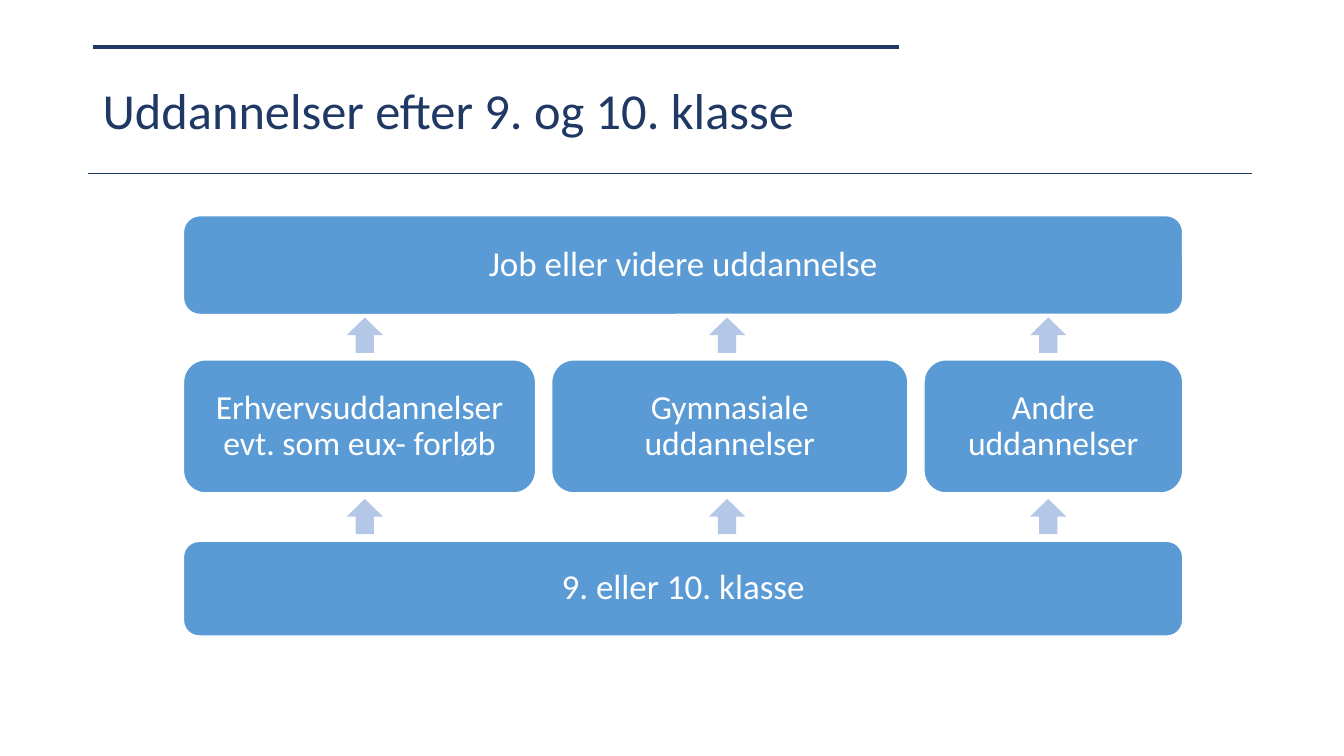
from itertools import product

from lxml import etree
from pptx import Presentation
from pptx.dml.color import RGBColor
from pptx.enum.shapes import MSO_CONNECTOR, MSO_SHAPE
from pptx.enum.text import MSO_ANCHOR, PP_ALIGN
from pptx.oxml.ns import qn
from pptx.util import Inches, Pt

STRAIGHT = MSO_CONNECTOR.STRAIGHT
ROUNDED = MSO_SHAPE.ROUNDED_RECTANGLE
UP_ARROW = MSO_SHAPE.UP_ARROW
MIDDLE = MSO_ANCHOR.MIDDLE
LEFT, CENTER = PP_ALIGN.LEFT, PP_ALIGN.CENTER


def colour(hex_value):
    return RGBColor.from_string(hex_value)


def apply(target, values):
    for key, value in values.items():
        setattr(target, key, value)


class EducationSlide:
    NAVY, BLUE, PALE, WHITE = "203864", "5B9BD5", "B4C7E7", "FFFFFF"
    FONT = "Calibri"

    def __init__(self, deck):
        self.width, self.height = deck.slide_width, deck.slide_height
        self.shapes = deck.slides.add_slide(deck.slide_layouts[6]).shapes

    def place(self, x, y, *size):
        spans = (self.width, self.height) * 2
        return [round(share * span / 100) for share, span in zip((x, y, *size), spans)]

    def label(self, shape, words, size, ink, align):
        frame = shape.text_frame
        apply(frame, {"text": words, "word_wrap": True, "vertical_anchor": MIDDLE})
        apply(frame, dict.fromkeys(("margin_left", "margin_right", "margin_top", "margin_bottom"), Inches(0.1)))
        paragraph = frame.paragraphs[0]
        apply(paragraph, {"alignment": align, "line_spacing": 0.9})
        apply(paragraph.runs[0].font, {"name": self.FONT, "size": Pt(size)})
        paragraph.runs[0].font.color.rgb = colour(ink)

    def title(self, words, *area):
        self.label(self.shapes.add_textbox(*self.place(*area)), words, 36, self.NAVY, LEFT)

    def rule(self, start, end, y, weight):
        line = self.shapes.add_connector(STRAIGHT, *self.place(start, y, end, y))
        line.line.color.rgb = colour(self.NAVY)
        line.line.width = Pt(weight)
        etree.SubElement(line._element.spPr, qn("a:effectLst"))

    def block(self, kind, fill, *area):
        shape = self.shapes.add_shape(kind, *self.place(*area))
        shape.shadow.inherit = False
        shape.fill.solid()
        shape.fill.fore_color.rgb = colour(fill)
        return shape

    def step(self, words, size, *area):
        shape = self.block(ROUNDED, self.BLUE, *area)
        shape.line.color.rgb = colour(self.WHITE)
        shape.line.width = Pt(1)
        self.label(shape, words, size, self.WHITE, CENTER)

    def arrow(self, center, top):
        width, height = 2.7, 4.67
        shape = self.block(UP_ARROW, self.PALE, center - width / 2, top, width, height)
        shape.line.fill.background()


def main():
    deck = Presentation()
    apply(deck, {"slide_width": Inches(13.33), "slide_height": Inches(7.5)})
    slide = EducationSlide(deck)

    slide.rule(6.9, 66.9, 6.27, 3)
    slide.rule(6.53, 93.15, 22.93, 0.25)
    slide.title("Uddannelser efter 9. og 10. klasse", 6.9, 5.33, 86.25, 19.33)

    left, full_width, gap = 13.65, 74.35, 1.2
    slide.step("Job eller videre uddannelse", 25, left, 28.53, full_width, 13.07)
    programme_left = left
    for programme, width in (
        ("Erhvervsuddannelser evt. som eux- forløb", 26.2),
        ("Gymnasiale uddannelser", 26.5),
        ("Andre uddannelser", 19.25),
    ):
        slide.step(programme, 24, programme_left, 47.6, width, 17.6)
        programme_left += width + gap
    slide.step("9. eller 10. klasse", 25, left, 71.6, full_width, 12.53)

    for top, center in product((66, 42), (27.15, 54.1, 78)):
        slide.arrow(center, top)

    deck.save("out.pptx")


if __name__ == "__main__":
    main()
